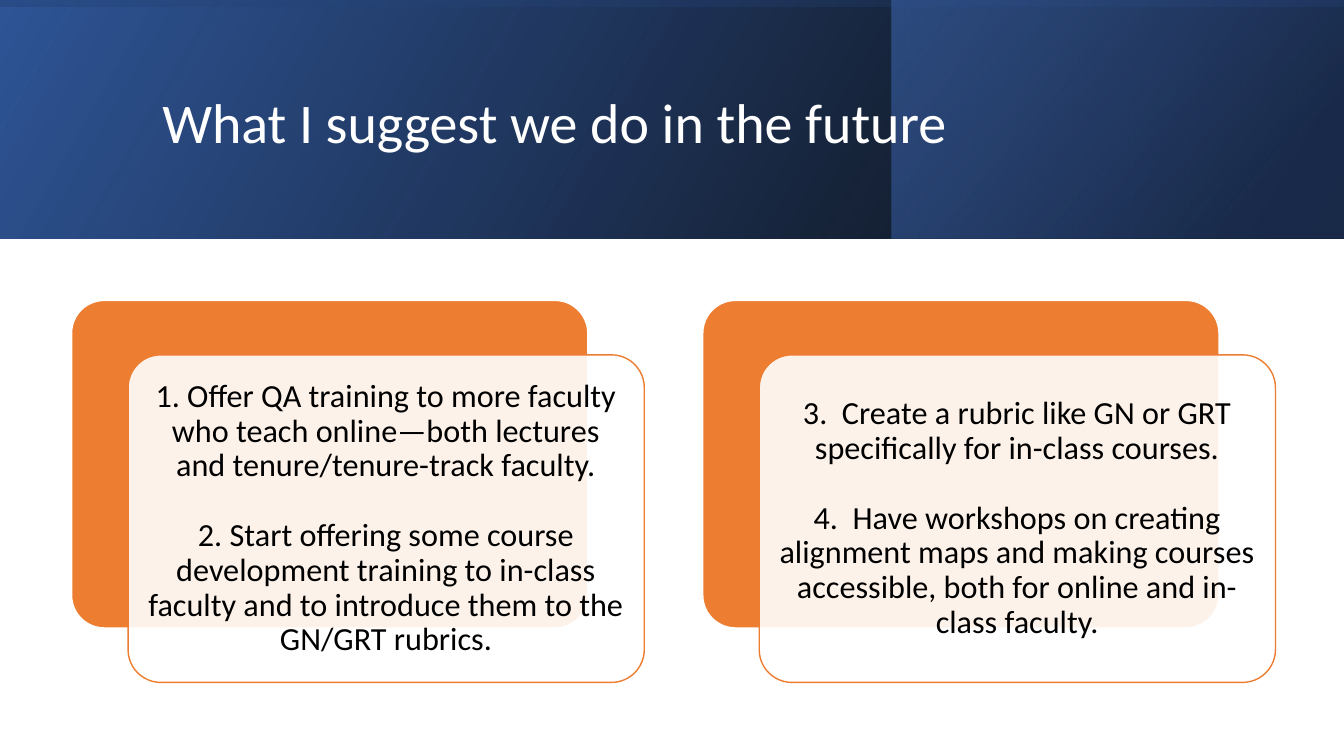
from dataclasses import dataclass

from lxml import etree
from pptx import Presentation
from pptx.dml.color import RGBColor
from pptx.enum.shapes import MSO_SHAPE
from pptx.enum.text import MSO_ANCHOR, MSO_AUTO_SIZE, PP_ALIGN
from pptx.oxml.ns import qn
from pptx.shapes.autoshape import Shape
from pptx.slide import Slide
from pptx.text.text import TextFrame
from pptx.util import Inches, Pt

RECT = MSO_SHAPE.RECTANGLE
ROUNDED = MSO_SHAPE.ROUNDED_RECTANGLE
MIDDLE = MSO_ANCHOR.MIDDLE
NO_FIT = MSO_AUTO_SIZE.NONE
LEFT, CENTER = PP_ALIGN.LEFT, PP_ALIGN.CENTER


@dataclass(frozen=True)
class Theme:
    font: str = "Calibri"
    title_size: float = 40
    body_size: float = 23
    line_spacing: float = 0.9
    item_gap: float = 25
    white: str = "FFFFFF"
    black: str = "000000"
    orange: str = "ED7D31"
    blue: str = "2F5597"
    navy: str = "203864"
    sky: str = "4472C4"


THEME = Theme()


@dataclass(frozen=True)
class Box:
    left: float
    top: float
    width: float
    height: float

    def emu(self) -> tuple[int, int, int, int]:
        return (Inches(self.left), Inches(self.top),
                Inches(self.width), Inches(self.height))


@dataclass(frozen=True)
class Stop:
    position: float
    color: str
    opacity: int


@dataclass(frozen=True)
class Banner:
    box: Box
    angle: float
    stops: tuple[Stop, Stop]
    rotation: float = 0


@dataclass(frozen=True)
class Card:
    left: float
    items: tuple[str, ...]


SLIDE_W, SLIDE_H, BANNER_H = 13.33, 7.5, 2.37
CARD_TOP, CARD_W, CARD_H = 2.98, 5.12, 3.25
PANEL_DX, PANEL_DY, TEXT_INSET = 0.56, 0.54, 0.1

BANNERS = (
    Banner(Box(0, 0, SLIDE_W, BANNER_H), 30,
           (Stop(0, THEME.black, 96), Stop(1, THEME.blue, 100))),
    Banner(Box(8.84, 0, 4.49, BANNER_H), 40,
           (Stop(0.19, THEME.navy, 68), Stop(1, THEME.sky, 48))),
    Banner(Box(5.48, -5.48, BANNER_H, SLIDE_W), 10,
           (Stop(0.23, THEME.blue, 16), Stop(0.99, THEME.black, 45)), 270),
)

CARDS = (
    Card(0.71, (
        "1. Offer QA training to more faculty who teach online—both lectures "
        "and tenure/tenure-track faculty.",
        "2. Start offering some course development training to in-class "
        "faculty and to introduce them to the GN/GRT rubrics.",
    )),
    Card(6.97, (
        "3.  Create a rubric like GN or GRT specifically for in-class courses.",
        "4.  Have workshops on creating alignment maps and making courses "
        "accessible, both for online and in-class faculty.",
    )),
)


def rgb(color: str) -> RGBColor:
    return RGBColor.from_string(color)


def set_opacity(color_element: etree._Element, percent: int) -> None:
    alpha = etree.SubElement(color_element, qn("a:alpha"))
    alpha.set("val", str(percent * 1000))


def draw_banner(s: Slide, banner: Banner) -> None:
    sp = s.shapes.add_shape(RECT, *banner.box.emu())
    sp.shadow.inherit = False
    sp.line.fill.background()
    sp.rotation = banner.rotation
    sp.element.spPr.find(qn("a:xfrm")).set("flipH", "1")
    sp.fill.gradient()
    sp.fill.gradient_angle = banner.angle
    for target, stop in zip(sp.fill.gradient_stops, banner.stops):
        target.position = stop.position
        target.color.rgb = rgb(stop.color)
    colors = sp.element.spPr.iter(qn("a:srgbClr"))
    for color, stop in zip(list(colors), banner.stops):
        set_opacity(color, stop.opacity)


def format_text(tf: TextFrame, size: float, color: str, align: PP_ALIGN) -> None:
    tf.word_wrap = True
    tf.auto_size = NO_FIT
    tf.vertical_anchor = MIDDLE
    for p in tf.paragraphs:
        p.alignment = align
        p.line_spacing = THEME.line_spacing
        for r in p.runs:
            r.font.name = THEME.font
            r.font.size = Pt(size)
            r.font.color.rgb = rgb(color)


def draw_title(s: Slide, text: str) -> None:
    title = s.shapes.title
    title.left, title.top, title.width, title.height = Box(
        1.51, 0.38, 10.63, 1.72).emu()
    title.text_frame.text = text
    format_text(title.text_frame, THEME.title_size, THEME.white, LEFT)
    s.shapes.element.append(title.element)


def draw_panel(s: Slide, box: Box, fill: str, line: str) -> Shape:
    sp = s.shapes.add_shape(ROUNDED, *box.emu())
    sp.adjustments[0] = 0.1
    sp.shadow.inherit = False
    sp.fill.solid()
    sp.fill.fore_color.rgb = rgb(fill)
    sp.line.color.rgb = rgb(line)
    sp.line.width = Pt(1)
    return sp


def draw_card(s: Slide, card: Card) -> None:
    back = Box(card.left, CARD_TOP, CARD_W, CARD_H)
    front = Box(card.left + PANEL_DX, CARD_TOP + PANEL_DY, CARD_W, CARD_H)
    draw_panel(s, back, THEME.orange, THEME.white)
    panel = draw_panel(s, front, THEME.white, THEME.orange)
    set_opacity(panel.element.spPr.find(qn("a:solidFill"))[0], 90)

    inner = Box(front.left + TEXT_INSET, front.top + TEXT_INSET,
                CARD_W - 2 * TEXT_INSET, CARD_H - 2 * TEXT_INSET)
    tf = s.shapes.add_textbox(*inner.emu()).text_frame
    tf.margin_left = tf.margin_right = Inches(TEXT_INSET)
    tf.margin_top = tf.margin_bottom = Inches(TEXT_INSET)
    tf.text = "\n".join(card.items)
    format_text(tf, THEME.body_size, THEME.black, CENTER)
    for p in tf.paragraphs[1:]:
        p.space_before = Pt(THEME.item_gap)


def main() -> None:
    prs = Presentation()
    prs.slide_width, prs.slide_height = Inches(SLIDE_W), Inches(SLIDE_H)
    s = prs.slides.add_slide(prs.slide_layouts[5])
    for banner in BANNERS:
        draw_banner(s, banner)
    draw_title(s, "What I suggest we do in the future")
    for card in CARDS:
        draw_card(s, card)
    prs.save("out.pptx")


if __name__ == "__main__":
    main()
